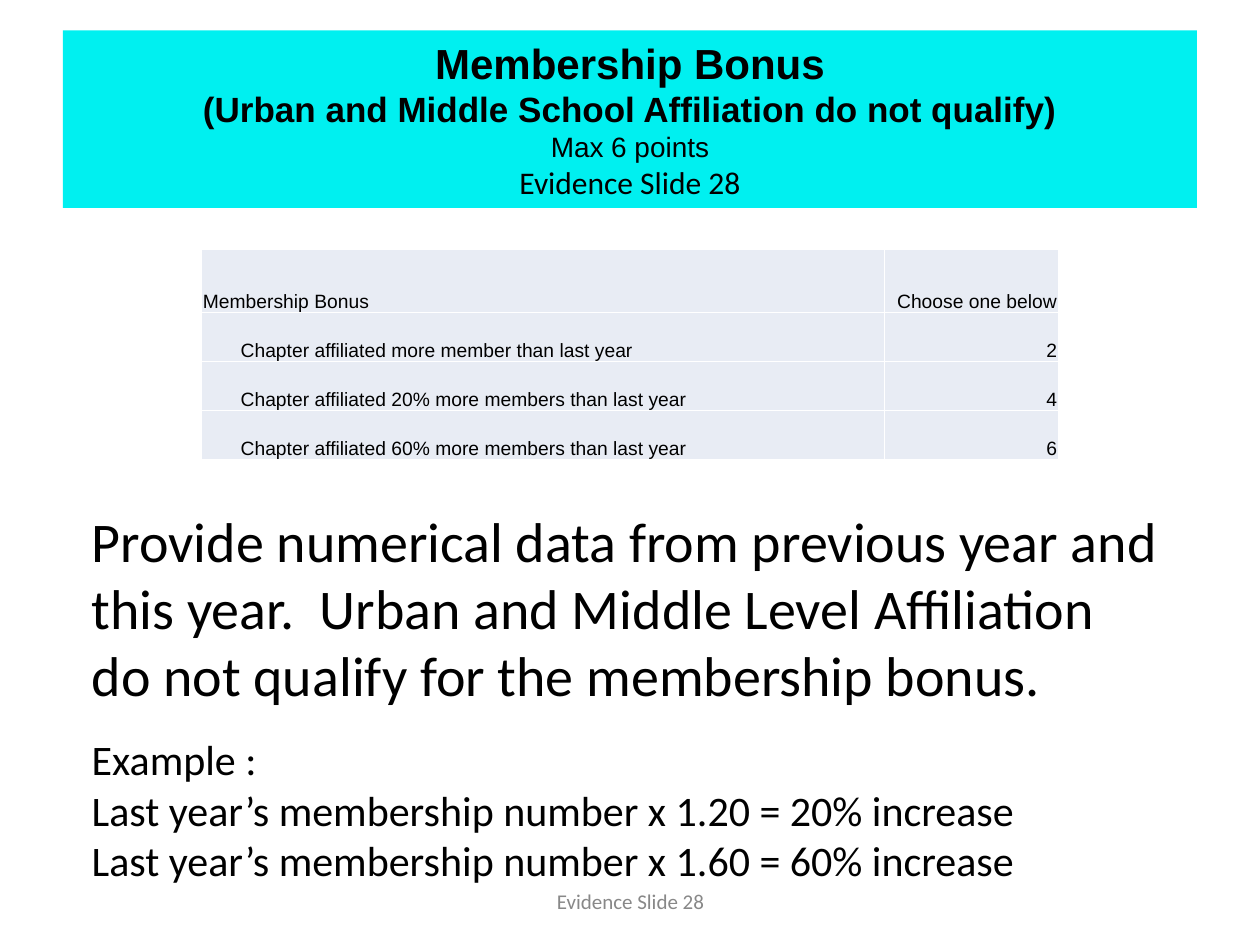
from dataclasses import dataclass

from lxml import etree
from pptx import Presentation
from pptx.dml.color import RGBColor
from pptx.enum import shapes, text
from pptx.oxml import ns
from pptx.util import Inches, Pt


@dataclass(frozen=True)
class Theme:
    banner: str = "00F0F0"
    cell: str = "E8ECF4"
    border: str = "FFFFFF"
    ink: str = "000000"
    muted: str = "888888"
    heading_font: str = "Arial"
    body_font: str = "Calibri"
    title: int = 24
    subtitle: int = 20
    points: int = 16
    evidence: int = 18
    table: int = 11
    body: int = 32
    example: int = 24
    footer: int = 12


THEME = Theme()
LEFT, CENTER, RIGHT = text.PP_ALIGN.LEFT, text.PP_ALIGN.CENTER, text.PP_ALIGN.RIGHT
BONUS_ROWS = [
    ("Membership Bonus", "Choose one below"),
    ("Chapter affiliated more member than last year", "2"),
    ("Chapter affiliated 20% more members than last year", "4"),
    ("Chapter affiliated 60% more members than last year", "6"),
]


def fill_with(item, color):
    item.fill.solid()
    item.fill.fore_color.rgb = RGBColor.from_string(color)


def write_lines(frame, lines, align=LEFT, color=THEME.ink):
    """Write one paragraph for each (words, size, font, bold) line."""
    for index, (words, size, font, bold) in enumerate(lines):
        para = frame.paragraphs[0] if index == 0 else frame.add_paragraph()
        para.alignment = align
        span = para.add_run()
        span.text = words
        span.font.size = Pt(size)
        span.font.name = font
        span.font.bold = bold
        span.font.color.rgb = RGBColor.from_string(color)


def add_banner(slide):
    box = slide.shapes.add_shape(shapes.MSO_SHAPE.RECTANGLE, Inches(0.5),
                                 Inches(0.24), Inches(9), Inches(1.41))
    box.shadow.inherit = False
    fill_with(box, THEME.banner)
    box.line.fill.background()
    frame = box.text_frame
    frame.word_wrap = True
    frame.vertical_anchor = text.MSO_ANCHOR.MIDDLE
    write_lines(frame, [
        ("Membership Bonus", THEME.title, THEME.heading_font, True),
        ("(Urban and Middle School Affiliation do not qualify)",
         THEME.subtitle, THEME.heading_font, True),
        ("Max 6 points", THEME.points, THEME.heading_font, False),
        ("Evidence Slide 28", THEME.evidence, THEME.body_font, False),
    ], CENTER)


def set_borders(cell):
    properties = cell._tc.get_or_add_tcPr()
    for position, side in enumerate(("lnL", "lnR", "lnT", "lnB")):
        line = etree.Element(ns.qn(f"a:{side}"), w=str(Pt(1)))
        fill = etree.SubElement(line, ns.qn("a:solidFill"))
        etree.SubElement(fill, ns.qn("a:srgbClr"), val=THEME.border)
        properties.insert(position, line)


def style_cell(cell, words, align, indent):
    cell.margin_left = Inches(0.01 + indent)
    cell.margin_right = cell.margin_top = Inches(0.01)
    cell.margin_bottom = 0
    cell.vertical_anchor = text.MSO_ANCHOR.BOTTOM
    fill_with(cell, THEME.cell)
    set_borders(cell)
    write_lines(cell.text_frame,
                [(words, THEME.table, THEME.heading_font, False)], align)


def add_bonus_table(slide):
    table = slide.shapes.add_table(len(BONUS_ROWS), 2, Inches(1.6), Inches(1.98),
                                   Inches(6.8), Inches(1.66)).table
    table.first_row = table.horz_banding = False
    table.columns[0].width = Inches(5.42)
    table.columns[1].width = Inches(1.38)
    for index, (label, points) in enumerate(BONUS_ROWS):
        is_header = index == 0
        table.rows[index].height = Inches(0.5 if is_header else 0.39)
        style_cell(table.cell(index, 0), label, LEFT, 0 if is_header else 0.3)
        style_cell(table.cell(index, 1), points, RIGHT, 0)


def add_text(slide, left, top, width, height):
    box = slide.shapes.add_textbox(Inches(left), Inches(top),
                                   Inches(width), Inches(height))
    box.text_frame.word_wrap = True
    return box.text_frame


def add_instructions(slide):
    frame = add_text(slide, 0.63, 3.97, 8.73, 2.92)
    examples = [
        "Example :",
        "Last year’s membership number x 1.20 = 20% increase",
        "Last year’s membership number x 1.60 = 60% increase",
    ]
    write_lines(frame, [
        ("Provide numerical data from previous year and this year.  Urban and "
         "Middle Level Affiliation do not qualify for the membership bonus.",
         THEME.body, THEME.body_font, False),
        *((words, THEME.example, THEME.body_font, False) for words in examples),
    ])
    frame.paragraphs[1].space_before = Pt(14.6)


def add_footer(slide):
    frame = add_text(slide, 3.42, 6.95, 3.17, 0.4)
    frame.vertical_anchor = text.MSO_ANCHOR.MIDDLE
    frame.margin_top = frame.margin_bottom = Inches(0.1)
    write_lines(frame, [("Evidence Slide 28", THEME.footer, THEME.body_font, False)],
                CENTER, THEME.muted)


def main():
    deck = Presentation()
    deck.slide_width, deck.slide_height = Inches(10), Inches(7.5)
    page = deck.slides.add_slide(deck.slide_layouts[6])
    add_banner(page)
    add_bonus_table(page)
    add_instructions(page)
    add_footer(page)
    deck.save("out.pptx")


if __name__ == "__main__":
    main()
